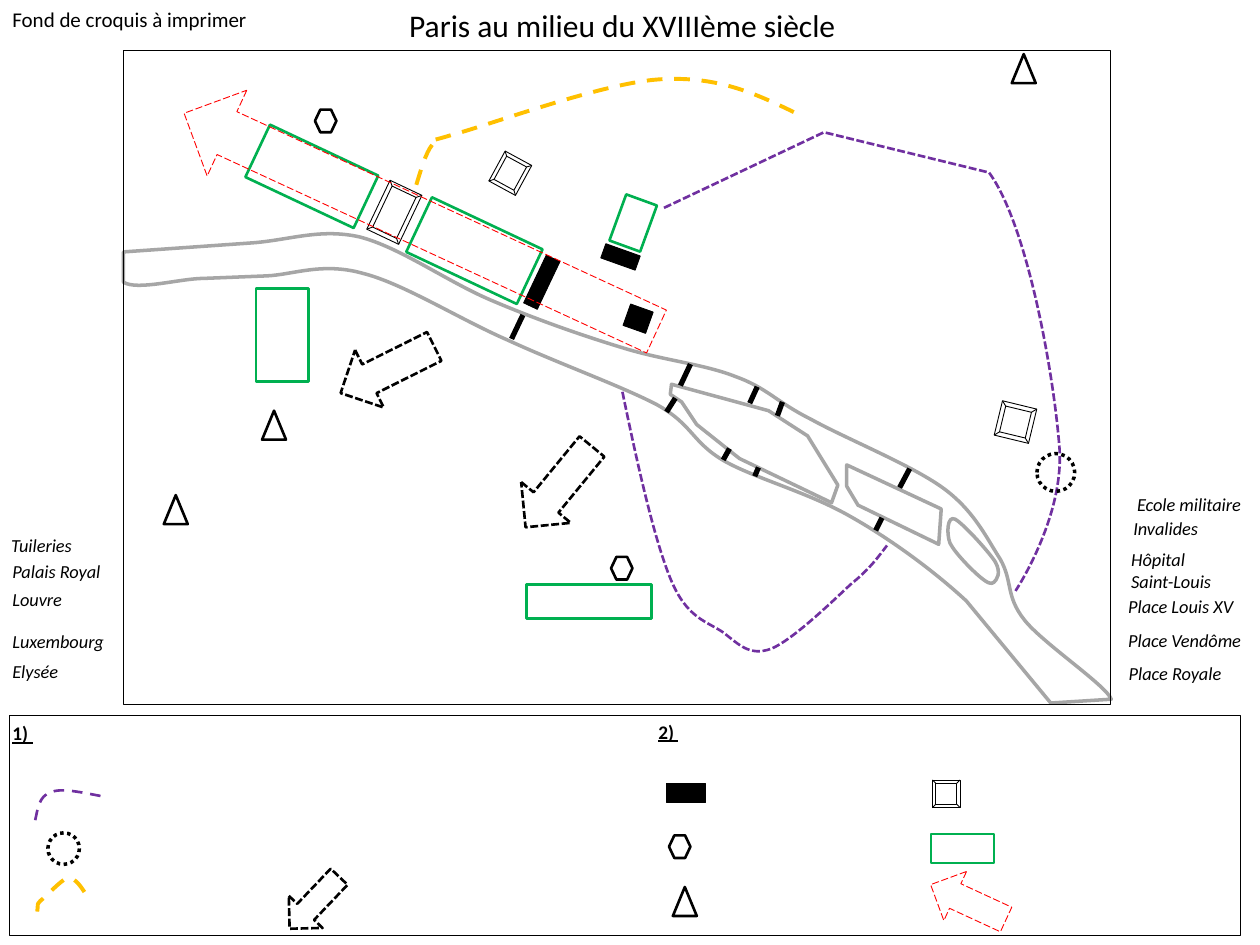
from pptx import Presentation
from pptx import util as u
from pptx.dml.color import RGBColor
from pptx.enum import dml, shapes, text
from pptx.oxml.ns import qn
from lxml import etree

COLS, ROWS = 1000, 750
CELL = u.Inches(10) // COLS
KIND = shapes.MSO_SHAPE
DASH = dml.MSO_LINE
BLACK, GREEN, GREY = "000000", "00B050", "A6A6A6"
RED, PURPLE, GOLD = "FF0000", "7030A0", "FFC000"

RIVER = [
    (98, 200), (198, 193),
    (229, 191, 253, 181, 285, 188), (317, 196, 354, 223, 389, 238),
    (424, 253, 461, 266, 494, 276), (526, 286, 559, 289, 584, 299),
    (609, 308, 616, 319, 644, 333), (671, 348, 723, 369, 748, 387),
    (773, 405, 783, 427, 794, 444), (804, 462, 798, 473, 813, 492),
    (827, 510, 878, 544, 882, 555), (834, 558), (767, 477),
    (741, 453, 707, 428, 675, 410), (642, 391, 600, 380, 575, 366),
    (549, 351, 550, 337, 521, 321), (492, 306, 442, 288, 403, 270),
    (364, 253, 320, 225, 288, 217), (256, 208, 233, 218, 212, 219),
    (162, 221), (143, 221, 109, 231, 98, 224)]
ISLES = [
    [(533, 305), (610, 326), (641, 346), (665, 385), (660, 399),
     (587, 364), (553, 337), (541, 319), (532, 313)],
    [(672, 369), (672, 386), (681, 401), (745, 432), (747, 404)],
    [(754, 431), (751, 423, 752, 409, 758, 412),
     (764, 415, 785, 438, 790, 446), (795, 455, 791, 460, 789, 462),
     (787, 464, 784, 463, 778, 458), (772, 453, 758, 439, 754, 431)]]
WALLS = [
    [(527, 165), (654, 105), (785, 137),
     (816, 179, 837, 301, 841, 357), (844, 412, 806, 469, 806, 469)],
    [(494, 311), (506, 369, 519, 427, 532, 459),
     (545, 491, 561, 493, 574, 502), (587, 512, 595, 521, 612, 515),
     (629, 508, 660, 478, 675, 464), (691, 451, 697, 442, 704, 433)]]
ROAD = [(630, 89), (599, 74, 569, 60, 523, 63),
        (478, 66, 389, 99, 359, 107), (329, 116, 348, 108, 343, 115),
        (338, 121, 334, 135, 330, 148)]
WALL_KEY = [(28, 651), (30, 642, 31, 632, 40, 629),
            (48, 625, 65, 629, 81, 632)]
ROAD_KEY = [(67, 708), (63, 702, 59, 696, 53, 697),
            (48, 699, 36, 712, 32, 715), (29, 719, 31, 715, 30, 718),
            (30, 721, 29, 726, 29, 731)]
BRIDGES = [
    (415, 250, 406, 269), (548, 289, 540, 306), (536, 316, 529, 327),
    (601, 307, 595, 320), (579, 356, 574, 365), (621, 319, 617, 330),
    (602, 371, 599, 378), (722, 372, 714, 387), (700, 411, 695, 421)]

PARKS = [(328, 175, 97, 48, 25.2), (200, 117, 95, 46, 25.2),
         (483, 164, 39, 26, 110), (187, 245, 74, 42, 90),
         (418, 464, 99, 27), (739, 662, 50, 23)]
HEXES = [(485, 442, 17, 18), (250, 87, 17, 18), (531, 663, 17, 18)]
PEAKS = [(534, 704, 19, 23), (130, 393, 19, 23),
         (208, 326, 19, 23), (803, 43, 19, 23)]
SQUARES = [(792, 321, 28, 28, 13.6), (299, 147, 28, 43, 25.4),
           (393, 124, 24, 27, 28.5), (740, 619, 22, 22)]
BLOCKS = [(529, 622, 31, 15), (497, 244, 19, 18, 19.6),
          (478, 198, 29, 12, 19.6), (409, 218, 42, 12, 295.4)]
AXES = [(747, 683, 43, 66, 114.8), (296, -30, 75, 413, 114.8)]
FRAMES = [(98, 40, 783.5, 519), (7.6, 568, 977, 174.4)]
RINGS = [(823, 360, 30, 30), (38, 661, 25, 25)]
ARROWS = [(231, 688, 37, 57, 43.6), (282, 252, 51, 83, 63.5),
          (418, 345, 51, 83, 39.4)]

PLACES = [
    ("Louvre", 0, 462, 69, 29), ("Palais Royal", 0, 440, 101, 29),
    ("Luxembourg", 0, 495, 98, 28), ("Elysée", 0, 519, 70, 28),
    ("Invalides", 889.6, 405.4, 73, 28),
    ("Ecole militaire", 892.6, 386.4, 107, 28),
    ("Hôpital Saint-Louis", 888, 430, 96, 45),
    ("Place Royale", 886, 521, 95, 29),
    ("Place Louis XV", 885.6, 467.6, 114, 28),
    ("Place Vendôme", 885.6, 494, 114, 28)]


def grid(*cells):
    return [round(cell * CELL) for cell in cells]


def tint(code):
    return RGBColor.from_string(code)


def stroke(item, hue, width, dash=None):
    item.line.color.rgb = tint(hue)
    item.line.width = u.Pt(width)
    if dash:
        item.line.dash_style = dash


def draw(slide, kind, spots, hue, width, dash=None, fill=None):
    for left, top, wide, high, *turn in spots:
        form = slide.shapes.add_shape(kind, *grid(left, top, wide, high))
        form.rotation = turn[0] if turn else 0
        form.shadow.inherit = False
        if fill:
            form.fill.solid()
            form.fill.fore_color.rgb = tint(fill)
        else:
            form.fill.background()
        stroke(form, hue, width, dash)


def bend(form, legs):
    sides = iter(list(form._element.iter(qn("a:lnTo"))))
    for leg in legs:
        side = next(sides)
        if len(leg) == 6:
            side.tag = qn("a:cubicBezTo")
            for _ in range(2):
                extra = next(sides)
                side.append(extra[0])
                extra.getparent().remove(extra)


def trace(slide, route, hue, width, dash=None, close=False):
    first, *rest = [grid(*leg[i:i + 2]) for leg in route
                    for i in range(0, len(leg), 2)]
    pen = slide.shapes.build_freeform(*first)
    pen.add_line_segments(rest, close=close)
    form = pen.convert_to_shape()
    bend(form, route[1:])
    form.shadow.inherit = False
    form.fill.background()
    stroke(form, hue, width, dash)


def bridge(slide, ends):
    line = slide.shapes.add_connector(shapes.MSO_CONNECTOR.STRAIGHT, *grid(*ends))
    stroke(line, BLACK, 3)
    etree.SubElement(line._element.spPr, qn("a:effectLst"))


def label(slide, words, left, top, wide, high, size=10.5, style="", mid=False):
    box = slide.shapes.add_textbox(*grid(left, top, wide, high))
    frame = box.text_frame
    frame.word_wrap = True
    frame.text = words
    para = frame.paragraphs[0]
    if mid:
        para.alignment = text.PP_ALIGN.CENTER
    font = para.font
    font.name, font.size = "Calibri", u.Pt(size)
    font.color.rgb = tint(BLACK)
    font.italic = "i" in style
    font.bold = "b" in style
    font.underline = "u" in style


def main():
    deck = Presentation()
    deck.slide_width, deck.slide_height = grid(COLS, ROWS)
    slide = deck.slides.add_slide(deck.slide_layouts[6])

    draw(slide, KIND.RECTANGLE, PARKS, GREEN, 1.5)
    for bank in [RIVER, *ISLES]:
        trace(slide, bank, GREY, 2, close=True)
    for ends in BRIDGES:
        bridge(slide, ends)
    for wall in WALLS:
        trace(slide, wall, PURPLE, 1.5, DASH.SQUARE_DOT)
    trace(slide, WALL_KEY, PURPLE, 1.5, DASH.DASH)
    for road in (ROAD, ROAD_KEY):
        trace(slide, road, GOLD, 2.25, DASH.DASH)

    draw(slide, KIND.HEXAGON, HEXES, BLACK, 1.5)
    draw(slide, KIND.ISOSCELES_TRIANGLE, PEAKS, BLACK, 1.5)
    draw(slide, KIND.BEVEL, SQUARES, BLACK, 0.5)
    draw(slide, KIND.RECTANGLE, BLOCKS, BLACK, 0.5, fill=BLACK)
    draw(slide, KIND.DOWN_ARROW, AXES, RED, 0.5, DASH.LONG_DASH)
    draw(slide, KIND.RECTANGLE, FRAMES, BLACK, 0.5)
    draw(slide, KIND.OVAL, RINGS, BLACK, 2, DASH.ROUND_DOT)
    draw(slide, KIND.DOWN_ARROW, ARROWS, BLACK, 1.5, DASH.SQUARE_DOT)

    for place in PLACES:
        label(slide, *place, style="i")
    label(slide, "Tuileries", -17.6, 419, 101, 29, style="i", mid=True)
    label(slide, "1) ", 0, 567.6, 48, 29, 11, "bu")
    label(slide, "2) ", 512.6, 566.4, 48, 29, 11, "bu")
    label(slide, "Paris au milieu du XVIIIème siècle", 183, 0, 622, 40, 18, mid=True)
    label(slide, "Fond de croquis à imprimer", 0, 0, 217, 30, 12)
    deck.save("out.pptx")


if __name__ == "__main__":
    main()
